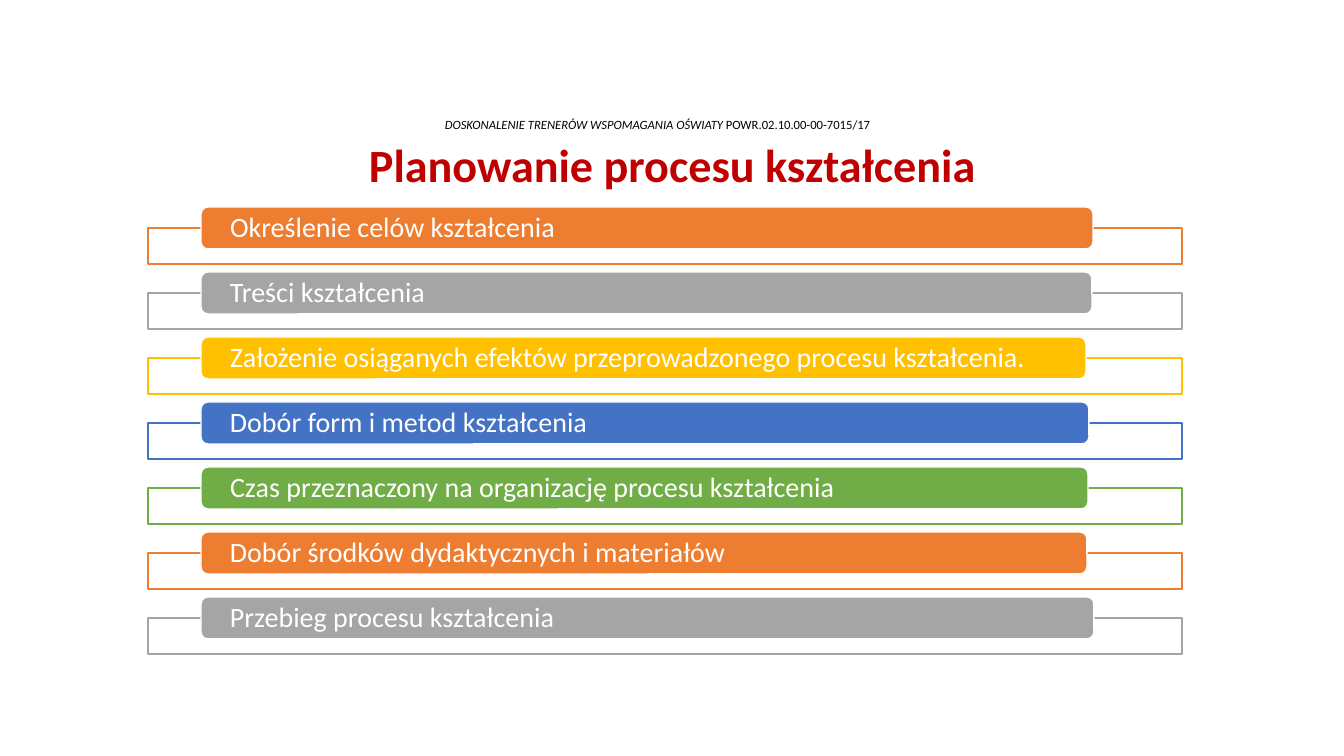
from pptx import Presentation
from pptx.dml.color import RGBColor
from pptx.enum.shapes import MSO_SHAPE as Shape
from pptx.enum.text import MSO_ANCHOR as Anchor, MSO_AUTO_SIZE as AutoSize, PP_ALIGN as Align
from pptx.util import Emu, Pt

PX = 914400 / 100.8
WHITE = RGBColor(0xFF, 0xFF, 0xFF)
BLACK = RGBColor(0x00, 0x00, 0x00)
RED = RGBColor(0xC0, 0x00, 0x00)
ORANGE = RGBColor(0xED, 0x7D, 0x31)
GRAY = RGBColor(0xA5, 0xA5, 0xA5)
GOLD = RGBColor(0xFF, 0xC0, 0x00)
BLUE = RGBColor(0x44, 0x72, 0xC4)
GREEN = RGBColor(0x70, 0xAD, 0x47)


def px(*lengths):
    return [Emu(round(length * PX)) for length in lengths]


def write(box, *texts, size, color, bold=False, italics=(False,), align=Align.CENTER, inset=0):
    frame = box.text_frame
    frame.word_wrap = True
    frame.auto_size = AutoSize.NONE
    frame.vertical_anchor = Anchor.MIDDLE
    frame.margin_left, frame.margin_right = px(inset, inset)
    frame.margin_top = frame.margin_bottom = 0
    para = frame.paragraphs[0]
    para.alignment = align
    para.line_spacing = 0.9
    for text, italic in zip(texts, italics):
        span = para.add_run()
        span.text = text
        span.font.name = "Calibri"
        span.font.size = Pt(size)
        span.font.bold = bold
        span.font.italic = italic
        span.font.color.rgb = color


deck = Presentation()
deck.slide_width, deck.slide_height = px(1344, 756)
page = deck.slides.add_slide(deck.slide_layouts[5])

project = page.shapes.add_textbox(*px(80, 115, 1155, 20))
write(project, "DOSKONALENIE TRENERÓW WSPOMAGANIA OŚWIATY ", "POWR.02.10.00-00-7015/17",
      size=9, color=BLACK, italics=(True, False))

title = page.shapes.title
title.left, title.top, title.width, title.height = px(93, 135, 1159, 65)
write(title, "Planowanie procesu kształcenia", size=33, color=RED, bold=True)

STEPS = [
    ("Określenie celów kształcenia", ORANGE, 892),
    ("Treści kształcenia", GRAY, 891),
    ("Założenie osiąganych efektów przeprowadzonego procesu kształcenia.", GOLD, 885),
    ("Dobór form i metod kształcenia", BLUE, 888),
    ("Czas przeznaczony na organizację procesu kształcenia", GREEN, 887),
    ("Dobór środków dydaktycznych i materiałów", ORANGE, 886),
    ("Przebieg procesu kształcenia", GRAY, 893),
]
STEP_PITCH = 65

for index, (label, color, width) in enumerate(STEPS):
    top = 207 + index * STEP_PITCH
    outline = page.shapes.add_shape(Shape.RECTANGLE, *px(148, top + 21, 1034, 36))
    bar = page.shapes.add_shape(Shape.ROUNDED_RECTANGLE, *px(201, top, width, 42))
    for box, fill, line in ((outline, WHITE, color), (bar, color, WHITE)):
        box.shadow.inherit = False
        box.fill.solid()
        box.fill.fore_color.rgb = fill
        box.line.color.rgb = line
        box.line.width = Pt(1)
    write(bar, label, size=20, color=WHITE, align=Align.LEFT, inset=27)

deck.save("out.pptx")
